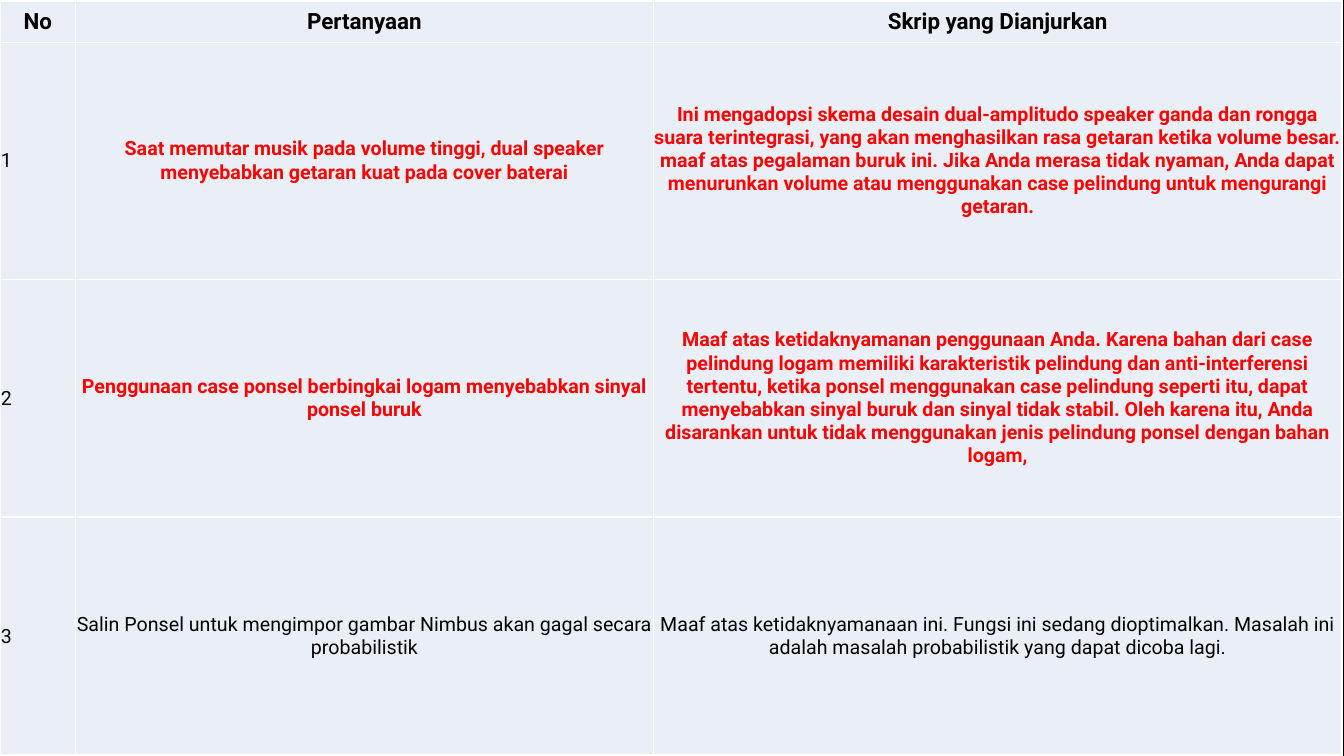
import dataclasses

import lxml.etree
import pptx
import pptx.dml.color
import pptx.enum.text
import pptx.oxml.ns
import pptx.table
import pptx.util

Inches = pptx.util.Inches
Align = pptx.enum.text.PP_ALIGN

COLORS = {
    "background": "000000",
    "cell": "EAEFF7",
    "border": "FFFFFF",
    "text": "000000",
    "highlight": "FF0000",
}
FONT = "Roboto"
COLUMN_WIDTHS = (0.75, 5.73, 6.83)
ROW_HEIGHTS = (0.41, 2.35, 2.36, 2.36)
HEADINGS = ("No", "Pertanyaan", "Skrip yang Dianjurkan")


@dataclasses.dataclass
class Entry:
    question: str
    script: str
    highlighted: bool = False


ENTRIES = (
    Entry(
        "Saat memutar musik pada volume tinggi, dual speaker menyebabkan "
        "getaran kuat pada cover baterai",
        "Ini mengadopsi skema desain dual-amplitudo speaker ganda dan rongga "
        "suara terintegrasi, yang akan menghasilkan rasa getaran ketika volume "
        "besar. maaf atas pegalaman buruk ini. Jika Anda merasa tidak nyaman, "
        "Anda dapat menurunkan volume atau menggunakan case pelindung untuk "
        "mengurangi getaran.",
        highlighted=True,
    ),
    Entry(
        "Penggunaan case ponsel berbingkai logam menyebabkan sinyal ponsel buruk",
        "Maaf atas ketidaknyamanan penggunaan Anda. Karena bahan dari case "
        "pelindung logam memiliki karakteristik pelindung dan anti-interferensi "
        "tertentu, ketika ponsel menggunakan case pelindung seperti itu, dapat "
        "menyebabkan sinyal buruk dan sinyal tidak stabil. Oleh karena itu, Anda "
        "disarankan untuk tidak menggunakan jenis pelindung ponsel dengan bahan "
        "logam,",
        highlighted=True,
    ),
    Entry(
        "Salin Ponsel untuk mengimpor gambar Nimbus akan gagal secara probabilistik",
        "Maaf atas ketidaknyamanaan ini. Fungsi ini sedang dioptimalkan. Masalah "
        "ini adalah masalah probabilistik yang dapat dicoba lagi.",
    ),
)


def rgb(name: str) -> pptx.dml.color.RGBColor:
    return pptx.dml.color.RGBColor.from_string(COLORS[name])


def add_borders(cell: pptx.table._Cell) -> None:
    qn = pptx.oxml.ns.qn
    properties = cell._tc.get_or_add_tcPr()
    for side in ("lnL", "lnR", "lnT", "lnB"):
        line = lxml.etree.SubElement(
            properties, qn(f"a:{side}"), w=str(pptx.util.Pt(1))
        )
        fill = lxml.etree.SubElement(line, qn("a:solidFill"))
        lxml.etree.SubElement(fill, qn("a:srgbClr"), val=COLORS["border"])


def write_cell(
    cell: pptx.table._Cell,
    text: str,
    *,
    size: int = 14,
    color: str = "text",
    bold: bool = False,
    align: Align = Align.CENTER,
    inset: float = 0,
) -> None:
    add_borders(cell)
    cell.fill.solid()
    cell.fill.fore_color.rgb = rgb("cell")
    cell.vertical_anchor = pptx.enum.text.MSO_ANCHOR.MIDDLE
    cell.margin_left = cell.margin_right = cell.margin_top = Inches(inset)
    cell.margin_bottom = Inches(0)
    para = cell.text_frame.paragraphs[0]
    para.alignment = align
    span = para.add_run()
    span.text = text
    span.font.name = FONT
    span.font.size = pptx.util.Pt(size)
    span.font.bold = bold
    span.font.color.rgb = rgb(color)


def main() -> None:
    deck = pptx.Presentation()
    deck.slide_width, deck.slide_height = Inches(13.33), Inches(7.5)
    page = deck.slides.add_slide(deck.slide_layouts[6])
    page.background.fill.solid()
    page.background.fill.fore_color.rgb = rgb("background")

    table = page.shapes.add_table(
        len(ROW_HEIGHTS), len(COLUMN_WIDTHS), Inches(0), Inches(0.01),
        Inches(sum(COLUMN_WIDTHS)), Inches(sum(ROW_HEIGHTS)),
    ).table
    table.first_row = table.horz_banding = False
    for column, width in zip(table.columns, COLUMN_WIDTHS):
        column.width = Inches(width)
    for row, height in zip(table.rows, ROW_HEIGHTS):
        row.height = Inches(height)

    for column, heading in enumerate(HEADINGS):
        write_cell(table.cell(0, column), heading, size=16, bold=True, inset=0.01)
    for number, entry in enumerate(ENTRIES, start=1):
        write_cell(
            table.cell(number, 0), str(number), align=Align.JUSTIFY, inset=0.01
        )
        color = "highlight" if entry.highlighted else "text"
        for column, text in enumerate((entry.question, entry.script), start=1):
            write_cell(
                table.cell(number, column), text, color=color, bold=entry.highlighted
            )

    deck.save("out.pptx")


if __name__ == "__main__":
    main()
